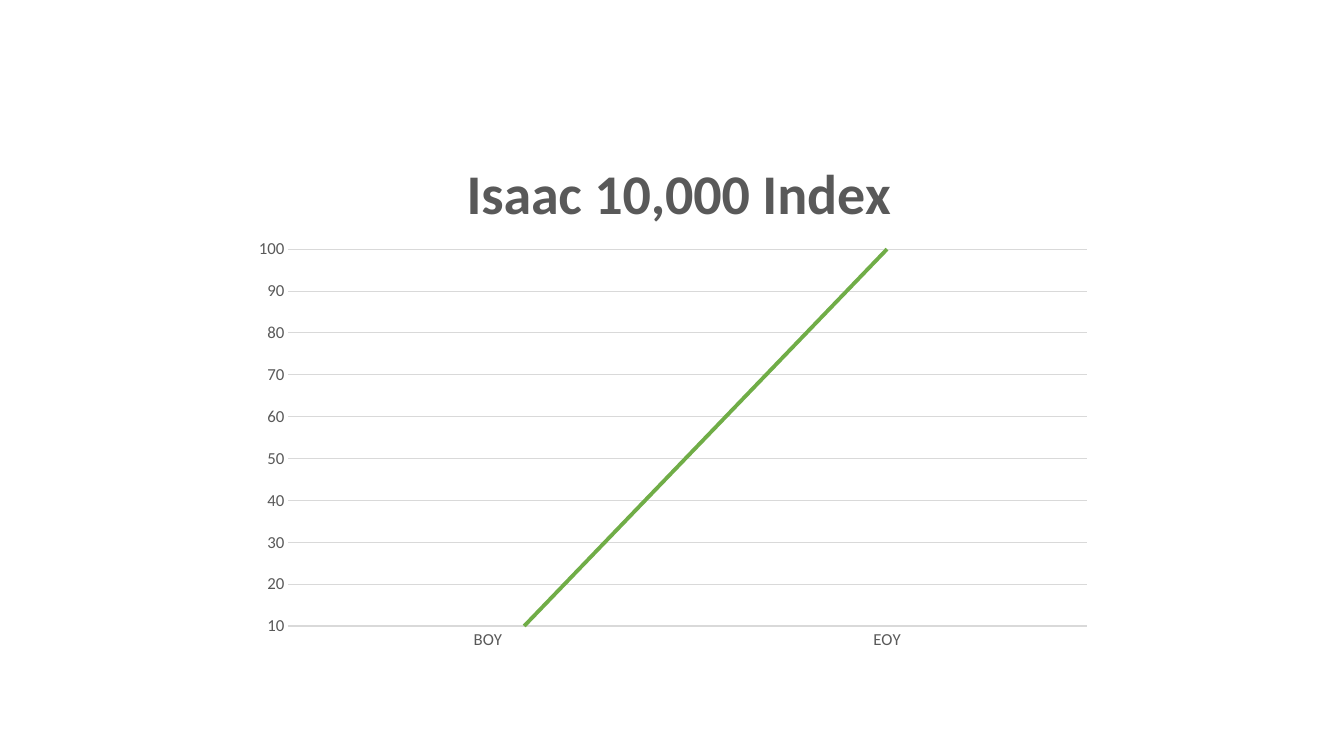
from dataclasses import dataclass

import pptx
import pptx.chart.data
import pptx.dml.color
import pptx.enum.chart
import pptx.oxml
import pptx.oxml.ns
import pptx.util
from pptx.util import Inches


@dataclass(frozen=True)
class Theme:
    font: str = "Calibri"
    text: str = "595959"
    rule: str = "D9D9D9"
    index_line: str = "70AD47"
    title_size: int = 40
    label_size: int = 12


THEME = Theme()


def rgb(value):
    return pptx.dml.color.RGBColor.from_string(value)


def style_font(font, size, bold=False):
    font.name = THEME.font
    font.size = pptx.util.Pt(size)
    font.bold = bold
    font.color.rgb = rgb(THEME.text)


def style_line(line, color, width):
    line.color.rgb = rgb(color)
    line.width = pptx.util.Pt(width)


def place(parent, position, **fractions):
    """Set a manual layout, in fractions of the chart area."""
    for old_layout in parent.findall(pptx.oxml.ns.qn("c:layout")):
        parent.remove(old_layout)
    inner = '<c:layoutTarget val="inner"/>' if "w" in fractions else ""
    modes = "".join(f'<c:{side}Mode val="edge"/>' for side in "xy")
    sizes = "".join(f'<c:{key} val="{value}"/>' for key, value in fractions.items())
    parent.insert(position, pptx.oxml.parse_xml(
        f'<c:layout {pptx.oxml.ns.nsdecls("c")}><c:manualLayout>'
        f"{inner}{modes}{sizes}</c:manualLayout></c:layout>"))


def add_title(chart, text):
    chart.has_title = True
    heading = chart.chart_title
    run = heading.text_frame.paragraphs[0].add_run()
    run.text = text
    style_font(run.font, THEME.title_size, bold=True)
    heading.include_in_layout = False
    place(heading.element, 1, x=0.25, y=0.06)


def style_axis(axis):
    axis.major_tick_mark = pptx.enum.chart.XL_TICK_MARK.NONE
    axis.minor_tick_mark = pptx.enum.chart.XL_TICK_MARK.NONE
    style_font(axis.tick_labels.font, THEME.label_size)


def add_index_chart(slide):
    data = pptx.chart.data.CategoryChartData()
    data.categories = ["BOY", "EOY"]
    data.add_series("Series 1", [1, 100])
    chart = slide.shapes.add_chart(
        pptx.enum.chart.XL_CHART_TYPE.LINE,
        Inches(2.39), Inches(1.11), Inches(8.55), Inches(5.45), data).chart
    chart.has_legend = False
    add_title(chart, "Isaac 10,000 Index")

    # Axes and gridlines
    periods, levels = chart.category_axis, chart.value_axis
    for axis in (periods, levels):
        style_axis(axis)
    style_line(periods.format.line, THEME.rule, 1)
    levels.format.line.fill.background()
    levels.minimum_scale, levels.maximum_scale = 10, 100
    levels.major_unit = 10
    levels.has_major_gridlines = True
    style_line(levels.major_gridlines.format.line, THEME.rule, 0.75)

    # Index line
    plot = chart.plots[0]
    plot.vary_by_categories = False
    index = plot.series[0]
    index.smooth = False
    index.marker.style = pptx.enum.chart.XL_MARKER_STYLE.NONE
    style_line(index.format.line, THEME.index_line, 2.75)

    plot_area = chart.element.find(".//" + pptx.oxml.ns.qn("c:plotArea"))
    place(plot_area, 0, x=0.055, y=0.25, w=0.926, h=0.686)


def main():
    deck = pptx.Presentation()
    deck.slide_width, deck.slide_height = Inches(13.33), Inches(7.5)
    slide = deck.slides.add_slide(deck.slide_layouts[6])
    add_index_chart(slide)
    deck.save("out.pptx")


if __name__ == "__main__":
    main()
